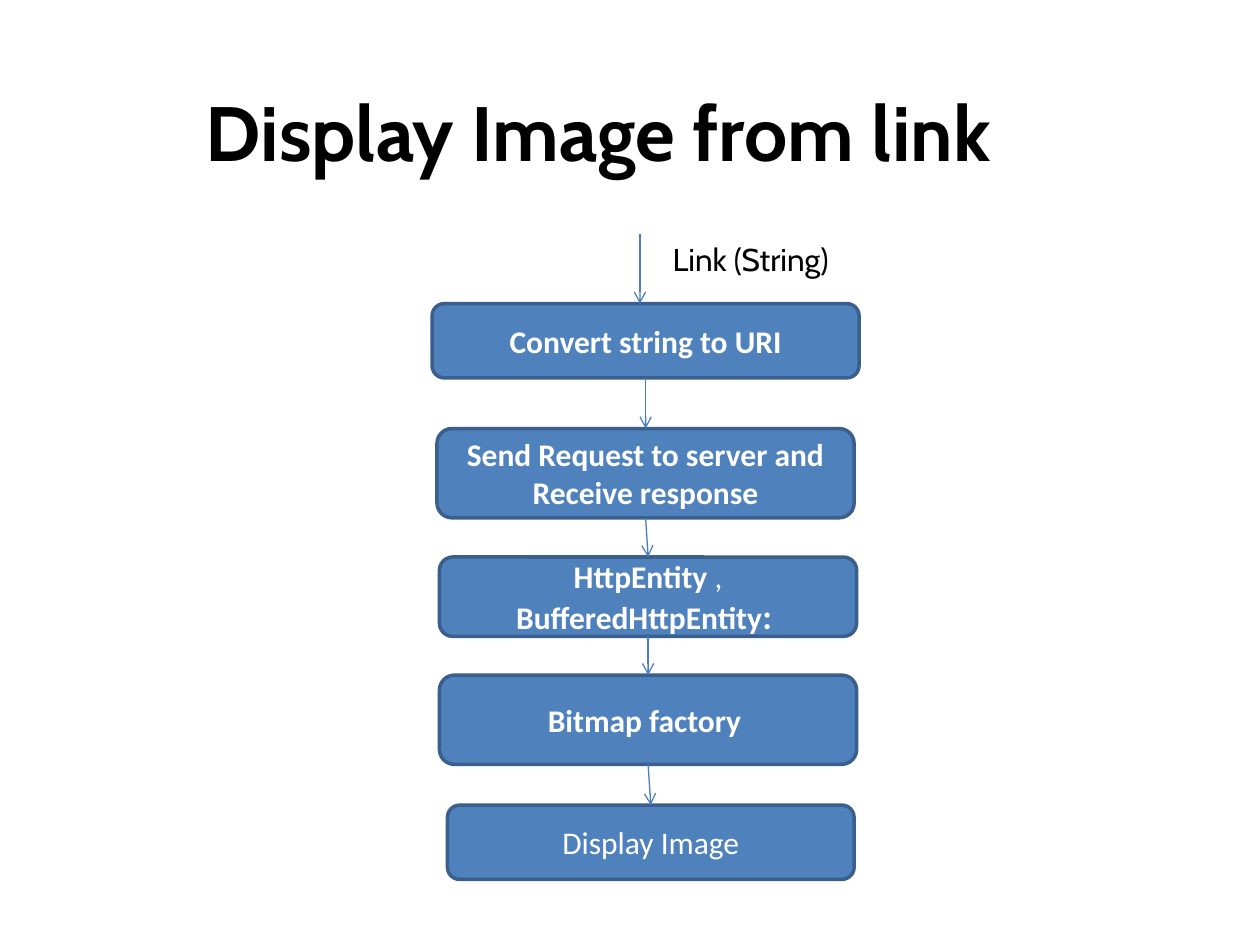
from dataclasses import dataclass
from itertools import pairwise

from lxml.etree import SubElement
from pptx import Presentation
from pptx.dml.color import RGBColor
from pptx.enum.shapes import MSO_CONNECTOR as Link, MSO_SHAPE as Shape
from pptx.enum.text import MSO_ANCHOR as Anchor, MSO_AUTO_SIZE as Fit, PP_ALIGN as Align
from pptx.oxml.ns import qn
from pptx.util import Cm, Pt

BLUE, EDGE, WIRE = "4F81BD", "3A5F8C", "4B7EBC"
WHITE, BLACK = "FFFFFF", "000000"


@dataclass
class Word:
    text: str
    bold: bool = True
    size: int = 18


@dataclass
class Step:
    left: float
    top: float
    width: float
    height: float
    words: list[Word]


STEPS = [
    Step(8.71, 6.12, 8.61, 1.5, [Word("Convert string to URI")]),
    Step(8.81, 8.64, 8.41, 1.8, [Word("Send Request to server and Receive response")]),
    Step(8.86, 11.23, 8.41, 1.6, [
        Word("HttpEntity"), Word(" , ", bold=False),
        Word("BufferedHttpEntity"), Word(": ", size=20)]),
    Step(8.86, 13.61, 8.41, 1.8, [Word("Bitmap factory ")]),
    Step(9.02, 16.23, 8.2, 1.5, [Word("Display Image", bold=False)]),
]


def paint(color, code: str) -> None:
    color.rgb = RGBColor.from_string(code)


def style(run, name: str, size: int, code: str, bold: bool = False) -> None:
    font = run.font
    font.name, font.size, font.bold = name, Pt(size), bold
    paint(font.color, code)


def draw_step(slide, step: Step):
    box = slide.shapes.add_shape(
        Shape.ROUNDED_RECTANGLE, Cm(step.left), Cm(step.top), Cm(step.width), Cm(step.height))
    box.shadow.inherit = False
    box.fill.solid()
    paint(box.fill.fore_color, BLUE)
    paint(box.line.color, EDGE)
    box.line.width = Pt(2)
    frame = box.text_frame
    frame.word_wrap = True
    frame.vertical_anchor = Anchor.MIDDLE
    para = frame.paragraphs[0]
    para.alignment = Align.CENTER
    for word in step.words:
        run = para.add_run()
        run.text = word.text
        style(run, "Calibri", word.size, WHITE, word.bold)
    return box


def draw_arrow(slide, x: float = 0, top: float = 0, end: float = 0):
    wire = slide.shapes.add_connector(Link.STRAIGHT, Cm(x), Cm(top), Cm(x), Cm(end))
    paint(wire.line.color, WIRE)
    wire.line.width = Pt(0.75)
    props = wire._element.spPr
    SubElement(props.find(qn("a:ln")), qn("a:tailEnd"), type="arrow")
    SubElement(props, qn("a:effectLst"))
    return wire


def main() -> None:
    deck = Presentation()
    deck.slide_width, deck.slide_height = Cm(25.4), Cm(19.05)
    slide = deck.slides.add_slide(deck.slide_layouts[5])

    # Title
    title = slide.shapes.title
    title.left, title.top, title.width, title.height = Cm(0), Cm(1.45), Cm(24.13), Cm(2.36)
    frame = title.text_frame
    frame.text = "Display Image from link"
    frame.vertical_anchor = Anchor.MIDDLE
    frame.paragraphs[0].alignment = Align.CENTER
    style(frame.paragraphs[0].runs[0], "Cabin", 44, BLACK, True)

    # Steps, each joined to the next
    boxes = [draw_step(slide, step) for step in STEPS]
    for upper, lower in pairwise(boxes):
        wire = draw_arrow(slide)
        wire.begin_connect(upper, 2)
        wire.end_connect(lower, 0)

    # Input arrow and its label
    draw_arrow(slide, 12.9, 4.72, STEPS[0].top)
    label = slide.shapes.add_textbox(Cm(13.31), Cm(4.72), Cm(7.39), Cm(1.02))
    frame = label.text_frame
    frame.word_wrap = True
    frame.auto_size = Fit.SHAPE_TO_FIT_TEXT
    frame.text = "Link (String)"
    style(frame.paragraphs[0].runs[0], "Cabin", 18, BLACK)

    deck.save("out.pptx")


if __name__ == "__main__":
    main()
